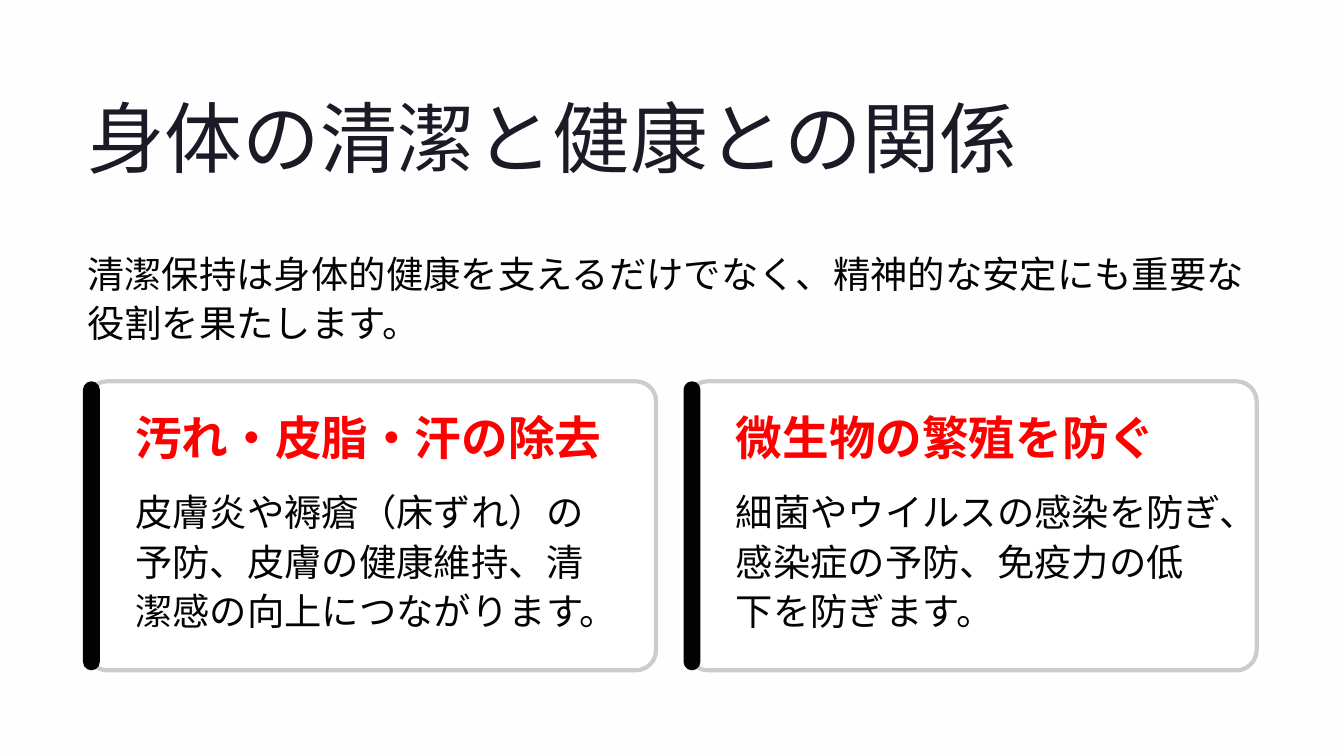
from dataclasses import dataclass

from pptx import Presentation
from pptx.dml.color import RGBColor
from pptx.enum.shapes import MSO_SHAPE
from pptx.util import Cm, Pt

ROUNDED = MSO_SHAPE.ROUNDED_RECTANGLE


@dataclass(frozen=True)
class Theme:
    background: str = "FEFEFE"
    card: str = "FFFFFF"
    border: str = "CCCCCC"
    title: str = "1B1B27"
    ink: str = "030303"
    accent: str = "FF0000"
    heading_font: str = "Inter"
    body_font: str = "Cabin"
    title_size: float = 66.5
    heading_size: float = 40
    body_size: float = 32
    title_leading: float = 83.5
    heading_leading: float = 41.5
    body_leading: float = 42.5
    border_width: float = 3.6


class SlideBuilder:
    def __init__(self, s, theme):
        self.s = s
        self.theme = theme
        fill = s.background.fill
        fill.solid()
        fill.fore_color.rgb = RGBColor.from_string(theme.background)

    def text(self, text, x, y, w, h, font, size, leading, color,
             bold=False, wrap=False):
        tf = self.s.shapes.add_textbox(Cm(x), Cm(y), Cm(w), Cm(h)).text_frame
        tf.margin_left = tf.margin_right = tf.margin_top = tf.margin_bottom = 0
        tf.word_wrap = wrap
        p = tf.paragraphs[0]
        p.text = text
        p.line_spacing = Pt(leading)
        p.font.name = font
        p.font.size = Pt(size)
        p.font.bold = bold
        p.font.color.rgb = RGBColor.from_string(color)

    def title(self, text, x, y, w, h):
        t = self.theme
        self.text(text, x, y, w, h, t.heading_font, t.title_size,
                  t.title_leading, t.title)

    def heading(self, text, x, y, w, h):
        t = self.theme
        self.text(text, x, y, w, h, t.heading_font, t.heading_size,
                  t.heading_leading, t.accent, bold=True)

    def body(self, text, x, y, w, h):
        t = self.theme
        self.text(text, x, y, w, h, t.body_font, t.body_size,
                  t.body_leading, t.ink, wrap=True)

    def box(self, x, y, w, h, radius, fill, border=None):
        sp = self.s.shapes.add_shape(ROUNDED, Cm(x), Cm(y), Cm(w), Cm(h))
        sp.shadow.inherit = False
        sp.adjustments[0] = radius
        sp.fill.solid()
        sp.fill.fore_color.rgb = RGBColor.from_string(fill)
        if border:
            sp.line.color.rgb = RGBColor.from_string(border)
            sp.line.width = Pt(self.theme.border_width)
        else:
            sp.line.fill.background()

    def card(self, x, y, heading, body):
        t = self.theme
        text_x, text_w = x + 1.45, 14.68
        self.box(x, y, 17.2, 8.74, 0.07, t.card, t.border)
        self.box(x - 0.13, y, 0.51, 8.74, 0.5, t.ink)
        self.heading(heading, text_x, y + 1.07, text_w, 1.47)
        self.body(body, text_x, y + 3.12, text_w, 4.55)


def main():
    prs = Presentation()
    prs.slide_width, prs.slide_height = Cm(40.64), Cm(22.86)
    s = prs.slides.add_slide(prs.slide_layouts[6])
    slide = SlideBuilder(s, Theme())
    left, card_top, card_step = 2.64, 11.53, 18.16

    # Title and introduction
    slide.title("身体の清潔と健康との関係", left, 2.59, 28.32, 2.95)
    slide.body("清潔保持は身体的健康を支えるだけでなく、"
               "精神的な安定にも重要な役割を果たします。",
               left, 7.44, 35.36, 3.02)

    # Benefit cards
    cards = [
        ("汚れ・皮脂・汗の除去",
         "皮膚炎や褥瘡（床ずれ）の予防、皮膚の健康維持、"
         "清潔感の向上につながります。"),
        ("微生物の繁殖を防ぐ",
         "細菌やウイルスの感染を防ぎ、感染症の予防、"
         "免疫力の低下を防ぎます。"),
    ]
    for i, (heading, body) in enumerate(cards):
        slide.card(left + i * card_step, card_top, heading, body)

    prs.save("out.pptx")


if __name__ == "__main__":
    main()
